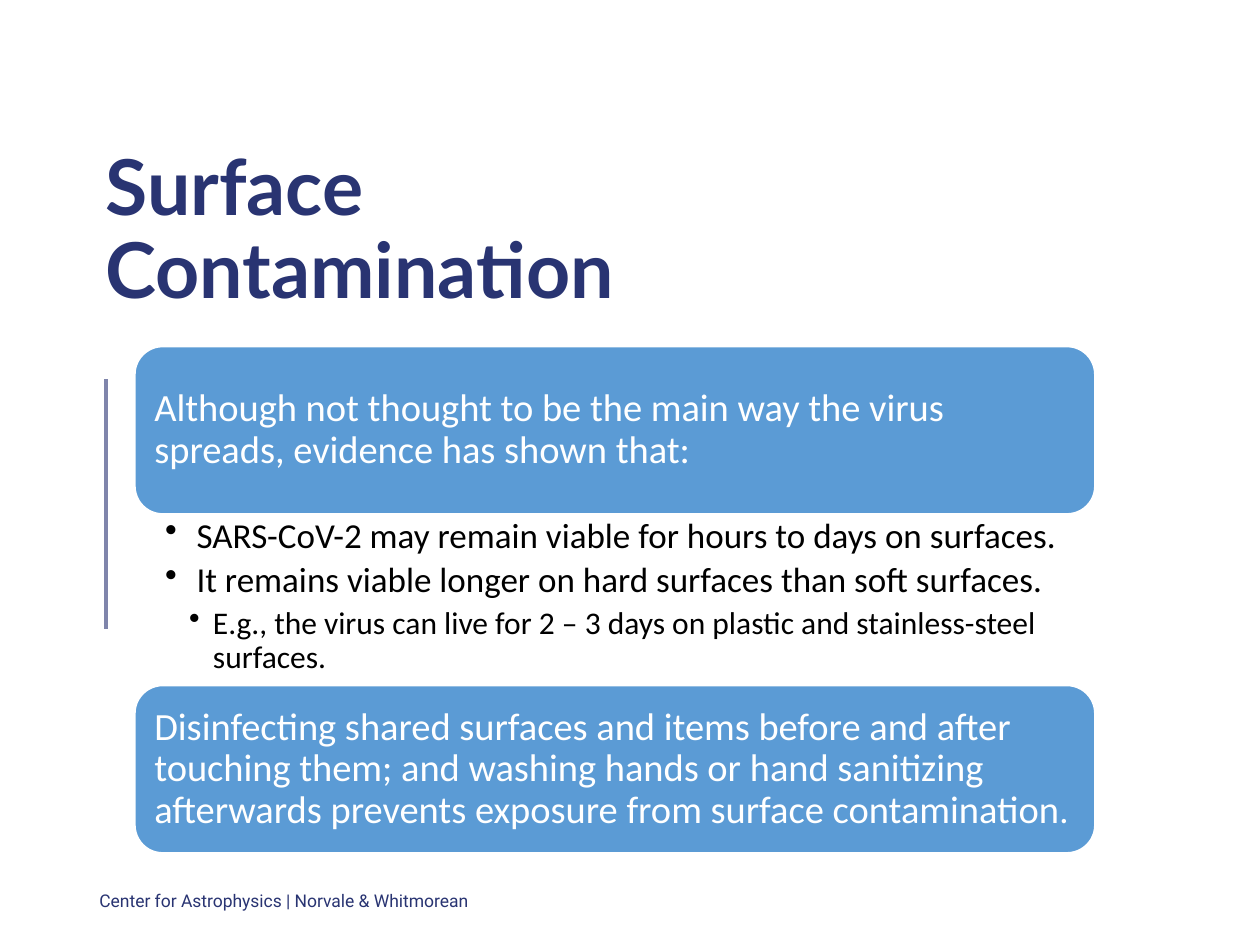
from lxml import etree
from pptx import Presentation
from pptx.dml.color import RGBColor
from pptx.enum import shapes, text
from pptx.oxml.ns import qn
from pptx.util import Inches, Pt

NAVY, BLUE, RULE, WHITE, BLACK = "293472", "5B9BD5", "7F85AB", "FFFFFF", "000000"
LEFT, WIDE, HIGH = 1.07, 7.62, 1.33
TOP, LIST, LOW = 2.75, 4.08, 5.44

INTRO = "Although not thought to be the main way the virus spreads, evidence has shown that:"
ADVICE = ("Disinfecting shared surfaces and items before and after touching them; "
          "and washing hands or hand sanitizing afterwards prevents exposure "
          "from surface contamination")
FACTS = [
    ("SARS-CoV-2 may remain viable for hours to days on surfaces.", 1, 20, 0.25, 0.25),
    ("It remains viable longer on hard surfaces than soft surfaces.", 1, 20, 0.25, 0.25),
    ("E.g., the virus can live for 2 – 3 days on plastic and stainless-steel surfaces.",
     2, 18, 0.38, 0.19),
]


def rgb(code):
    return RGBColor.from_string(code)


def write(par, words, size=22, font="Calibri", color=WHITE, bold=False,
          line=None, after=0):
    par.alignment = text.PP_ALIGN.LEFT
    par.space_after = Pt(after)
    if line:
        par.line_spacing = line
    run = par.add_run()
    run.text = words
    run.font.size = Pt(size)
    run.font.name = font
    run.font.bold = bold
    run.font.color.rgb = rgb(color)


def bullet(par, indent, hang):
    props = par._p.get_or_add_pPr()
    props.set("marL", str(Inches(indent)))
    props.set("indent", str(-Inches(hang)))
    etree.SubElement(props, qn("a:buChar")).set("char", "•")


def frame(shape, anchor, pads):
    """Set wrapping, anchor and the left, top, right and bottom insets."""
    body = shape.text_frame
    body.word_wrap = True
    body.vertical_anchor = anchor
    (body.margin_left, body.margin_top,
     body.margin_right, body.margin_bottom) = map(Inches, pads)
    return body


def label(slide, box, anchor, pads=(0.1, 0.05, 0.1, 0.05)):
    return frame(slide.shapes.add_textbox(*map(Inches, box)), anchor, pads)


def card(slide, top, words):
    shape = slide.shapes.add_shape(
        shapes.MSO_SHAPE.ROUNDED_RECTANGLE,
        Inches(LEFT), Inches(top), Inches(WIDE), Inches(HIGH))
    shape.shadow.inherit = False
    shape.fill.solid()
    shape.fill.fore_color.rgb = rgb(BLUE)
    shape.line.color.rgb = rgb(WHITE)
    shape.line.width = Pt(1)
    par = frame(shape, text.MSO_ANCHOR.MIDDLE, (0.09,) * 4).paragraphs[0]
    write(par, words, line=0.9)
    return par


def facts(slide):
    body = label(slide, (LEFT, LIST, WIDE, LOW - LIST), text.MSO_ANCHOR.TOP,
                 (0.24, 0.03, 0.16, 0.03))
    for num, (words, level, size, indent, hang) in enumerate(FACTS):
        par = body.add_paragraph() if num else body.paragraphs[0]
        par.level = level
        write(par, words, size=size, color=BLACK, line=0.9, after=size * 0.2)
        bullet(par, indent, hang)


def rule(slide, x, top, end):
    line = slide.shapes.add_connector(
        shapes.MSO_CONNECTOR.STRAIGHT, Inches(x), Inches(top), Inches(x), Inches(end))
    line.line.color.rgb = rgb(RULE)
    line.line.width = Pt(2)
    etree.SubElement(line._element.spPr, qn("a:effectLst"))


def main():
    deck = Presentation()
    deck.slide_width, deck.slide_height = Inches(10), Inches(7.5)
    slide = deck.slides.add_slide(deck.slide_layouts[6])

    title = label(slide, (0.74, 0.58, 4.66, 1.97), text.MSO_ANCHOR.BOTTOM)
    write(title.paragraphs[0], "Surface Contamination", size=44, font="Lato",
          color=NAVY, bold=True, line=0.9)
    foot = label(slide, (0.69, 6.95, 3.38, 0.4), text.MSO_ANCHOR.MIDDLE)
    write(foot.paragraphs[0], "Center for Astrophysics | Norvale & Whitmorean",
          size=10, font="Roboto", color=NAVY)
    rule(slide, 0.84, 3.01, 4.99)

    card(slide, TOP, INTRO)
    facts(slide)
    write(card(slide, LOW, ADVICE), ".", size=21, line=0.9)
    deck.save("out.pptx")


if __name__ == "__main__":
    main()
